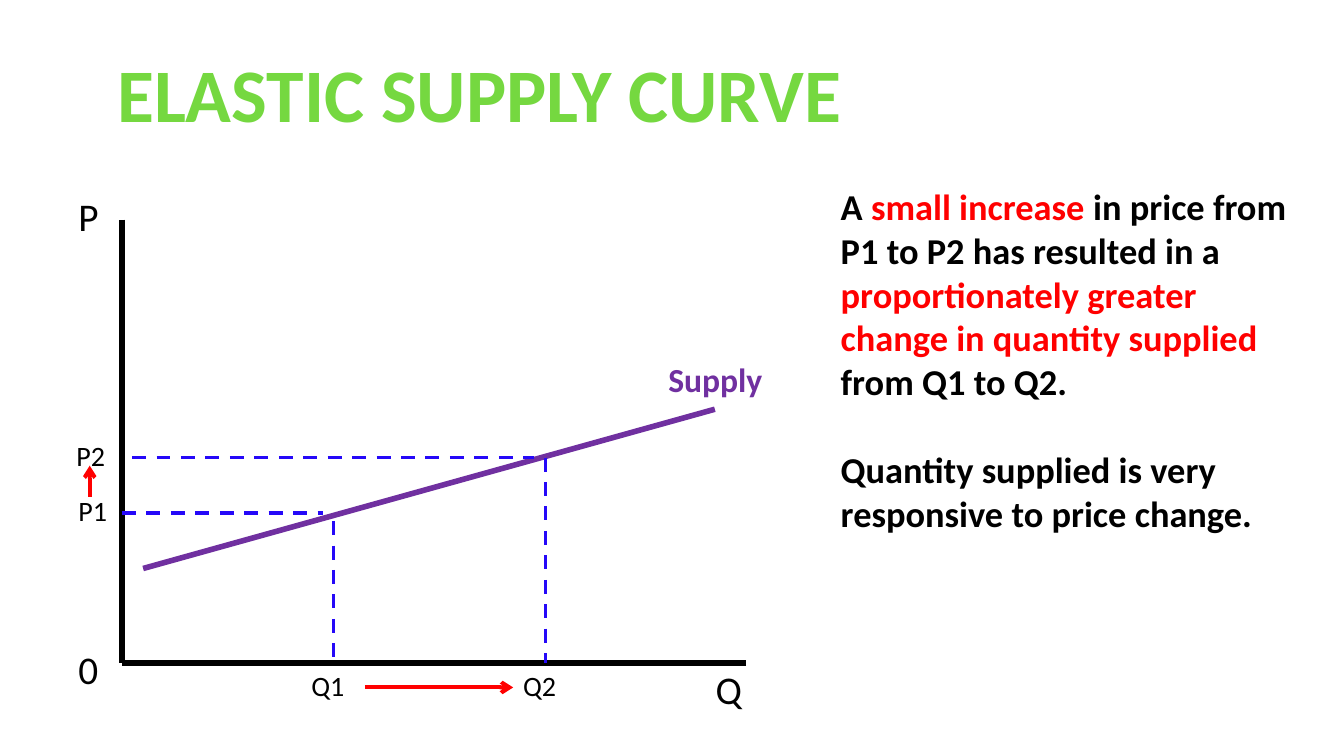
from pptx import Presentation
from pptx import util as u
from pptx.dml.color import RGBColor
from pptx.enum import dml, shapes, text
from pptx.oxml.ns import qn
from lxml import etree

BLACK, RED, BLUE = "000000", "FF0000", "2508F8"
PURPLE, GREEN = "7030A0", "75D840"


def shade(code):
    return RGBColor.from_string(code)


class Board:
    font = "Calibri"

    def __init__(self, slide):
        self.slide = slide

    def add_words(self, para, words, size, color=BLACK, bold=False):
        run = para.add_run()
        run.text = words
        run.font.name = self.font
        run.font.size = u.Pt(size)
        run.font.bold = bold
        run.font.color.rgb = shade(color)

    def place(self, shape, left, top, width, height):
        shape.left, shape.top = u.Inches(left), u.Inches(top)
        shape.width, shape.height = u.Inches(width), u.Inches(height)
        frame = shape.text_frame
        frame.word_wrap = True
        frame.auto_size = text.MSO_AUTO_SIZE.SHAPE_TO_FIT_TEXT
        frame.vertical_anchor = text.MSO_ANCHOR.TOP
        return frame

    def title(self, words, *area):
        para = self.place(self.slide.shapes.title, *area).paragraphs[0]
        para.alignment = text.PP_ALIGN.CENTER
        self.add_words(para, words, 54, GREEN, True)

    def box(self, *area):
        return self.place(self.slide.shapes.add_textbox(0, 0, 0, 0), *area)

    def label(self, words, area, size, color=BLACK, bold=False):
        self.add_words(self.box(*area).paragraphs[0], words, size, color, bold)

    def notes(self, area, paras, size, gap):
        frame = self.box(*area)
        for i, runs in enumerate(paras):
            para = frame.add_paragraph() if i else frame.paragraphs[0]
            para.space_before = u.Pt(gap if i else 0)
            for words, color in runs:
                self.add_words(para, words, size, color, True)

    def line(self, start, end, color, width, dash=False, arrow=False):
        ends = [u.Inches(n) for n in (*start, *end)]
        link = self.slide.shapes.add_connector(shapes.MSO_CONNECTOR.STRAIGHT, *ends)
        link.line.color.rgb = shade(color)
        link.line.width = u.Pt(width)
        if dash:
            link.line.dash_style = dml.MSO_LINE.DASH
        props = link._element.spPr
        if arrow:
            etree.SubElement(props.find(qn("a:ln")), qn("a:tailEnd"), type="arrow")
        etree.SubElement(props, qn("a:effectLst"))


def main():
    deck = Presentation()
    deck.slide_width, deck.slide_height = u.Inches(13.33), u.Inches(7.5)
    board = Board(deck.slides.add_slide(deck.slide_layouts[5]))
    board.title("ELASTIC SUPPLY CURVE", 0.58, 0.42, 8.35, 1.01)

    left, base = 1.21, 6.58
    price1, price2 = 5.09, 4.54
    count1, count2 = 3.31, 5.41

    board.line((left, 2.18), (left, base), BLACK, 4.5)
    board.line((7.4, base), (left, base), BLACK, 4.5)
    for words, area in (
        ("P", (0.68, 1.86, 0.42, 0.57)),
        ("Q", (7, 6.55, 1.05, 0.57)),
        ("0", (0.68, 6.35, 0.42, 0.57)),
    ):
        board.label(words, area, 28)

    board.line((1.42, 5.64), (7.09, 4.06), PURPLE, 4)
    board.label("Supply", (6.53, 3.51, 1.68, 0.5), 24, PURPLE, True)

    for start, end in (
        ((left, price1), (3.2, price1)),
        ((1.31, price2), (5.3, price2)),
        ((count2, price2), (count2, base)),
        ((count1, 5.17), (count1, base)),
    ):
        board.line(start, end, BLUE, 2.5, dash=True)
    for words, area in (
        ("P1", (0.68, 4.85, 0.52, 0.44)),
        ("P2", (0.66, 4.3, 0.84, 0.44)),
        ("Q1", (2.99, base, 0.73, 0.44)),
        ("Q2", (5.09, base, 1.05, 0.44)),
    ):
        board.label(words, area, 20)

    board.notes((8.24, 1.78, 4.83, 3.6), (
        (
            ("A ", BLACK),
            ("small increase", RED),
            (" in price from P1 to P2 has resulted in a ", BLACK),
            ("proportionately greater change in quantity supplied", RED),
            (" from Q1 to Q2.", BLACK),
        ),
        (("Quantity supplied is very responsive to price change.", BLACK),),
    ), 26, 31.7)

    board.line((3.62, 6.82), (5.09, 6.82), RED, 2.75, arrow=True)
    board.line((0.89, 4.93), (0.89, 4.62), RED, 2.75, arrow=True)
    deck.save("out.pptx")


if __name__ == "__main__":
    main()
